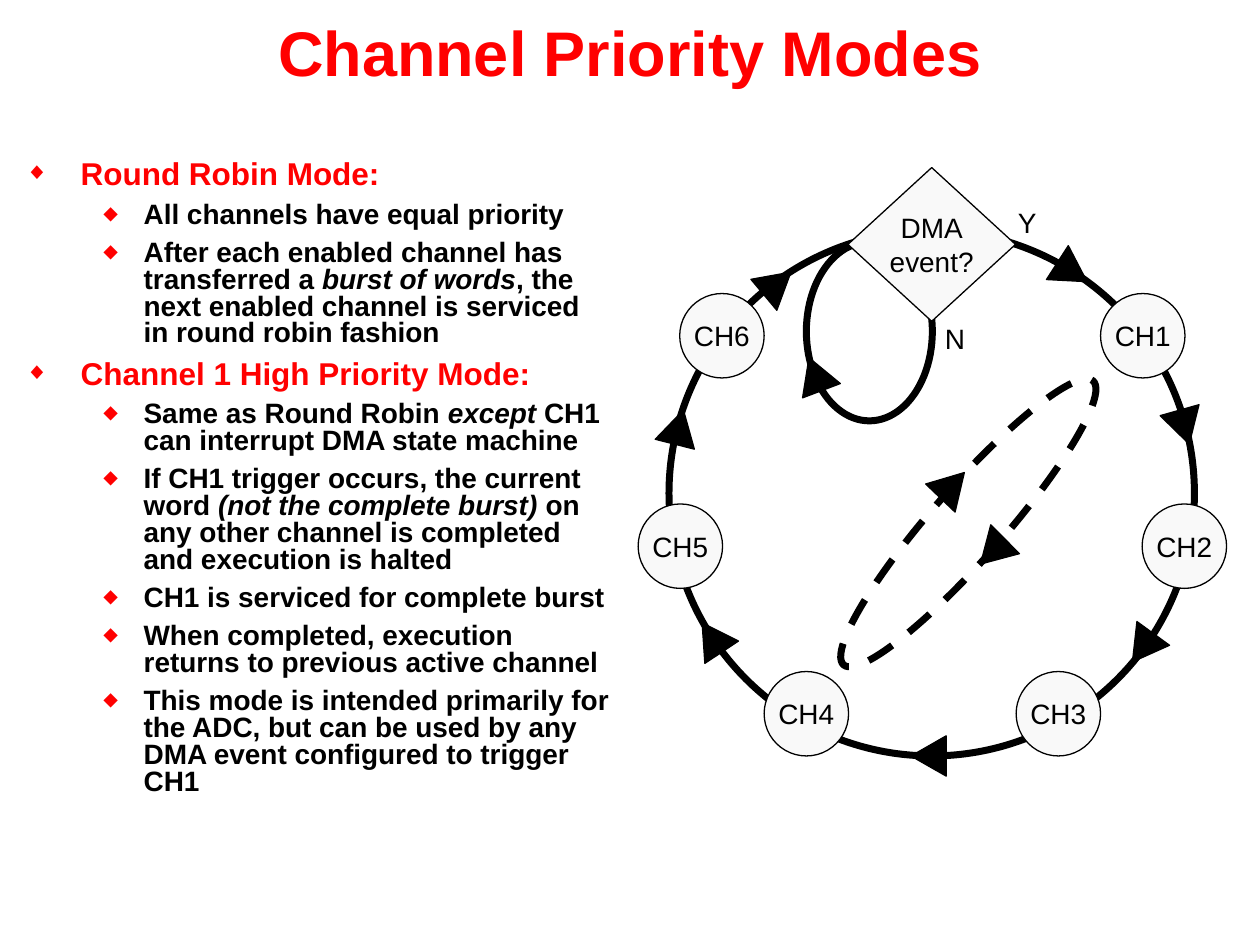
from dataclasses import dataclass

from lxml import etree
from pptx import Presentation
from pptx.dml.color import RGBColor
from pptx.enum.dml import MSO_LINE
from pptx.enum.shapes import MSO_SHAPE
from pptx.enum.text import MSO_ANCHOR, MSO_AUTO_SIZE, PP_ALIGN
from pptx.oxml.ns import qn
from pptx.util import Inches, Pt

OVAL, DIAMOND, TRIANGLE = MSO_SHAPE.OVAL, MSO_SHAPE.DIAMOND, MSO_SHAPE.ISOSCELES_TRIANGLE
MIDDLE, CENTER, DASH = MSO_ANCHOR.MIDDLE, PP_ALIGN.CENTER, MSO_LINE.DASH
NO_FIT, GROW = MSO_AUTO_SIZE.NONE, MSO_AUTO_SIZE.SHAPE_TO_FIT_TEXT
COLORS = {"red": "FF0000", "black": "000000", "node": "F9F9F9"}
LABEL = {"name": "Arial", "size": Pt(16), "bold": False}
RING_X, NODE, ARROW_W, ARROW_H = 7.4, 0.67, 0.32, 0.28


@dataclass
class Level:
    size: int
    color: str
    bullet: str
    margin: float
    hanging: float


@dataclass
class Item:
    level: int
    before: str
    emphasis: str = ""
    after: str = ""


@dataclass
class Node:
    text: str
    dx: float
    top: float


@dataclass
class Arrow:
    left: float
    top: float
    angle: float


LEVELS = [Level(18, "red", "◆", 0.44, 0.44), Level(16, "black", "⬥", 0.94, 0.32)]
ITEMS = [
    Item(0, "Round Robin Mode:"),
    Item(1, "All channels have equal priority"),
    Item(1, "After each enabled channel has transferred a ", "burst of words",
         ", the next enabled channel is serviced in round robin fashion"),
    Item(0, "Channel 1 High Priority Mode:"),
    Item(1, "Same as Round Robin ", "except", " CH1 can interrupt DMA state machine"),
    Item(1, "If CH1 trigger occurs, the current word ", "(not the complete burst)",
         " on any other channel is completed and execution is halted"),
    Item(1, "CH1 is serviced for complete burst"),
    Item(1, "When completed, execution returns to previous active channel"),
    Item(1, "This mode is intended primarily for the ADC, but can be used by any "
            "DMA event configured to trigger CH1"),
]
NODES = [
    Node("CH6", -1.67, 2.33), Node("CH1", 1.67, 2.33), Node("CH2", 2, 4),
    Node("CH5", -2, 4), Node("CH4", -1, 5.33), Node("CH3", 1, 5.33),
]
RING_ARROWS = [
    Arrow(9.24, 3.25, 164.2), Arrow(8.35, 2.02, 122.8), Arrow(8.91, 5, 216.1),
    Arrow(7.21, 5.86, 270), Arrow(5.49, 4.92, 326.4), Arrow(5.23, 3.25, 14.2),
    Arrow(6.01, 2.11, 50.1), Arrow(6.31, 2.83, 339.3),
]
INTERRUPT_ARROWS = [Arrow(7.38, 3.79, 163.5), Arrow(7.74, 4.16, 345)]


def rgb(name: str) -> RGBColor:
    return RGBColor.from_string(COLORS[name])


def set_font(font, color: str, values: dict) -> None:
    for key, value in values.items():
        setattr(font, key, value)
    font.color.rgb = rgb(color)


def place(s, left: float, top: float, width: float, height: float) -> None:
    s.left, s.top, s.width, s.height = map(Inches, (left, top, width, height))


def write(tf, lines: list[str], align=None) -> None:
    tf.word_wrap = False
    for i, line in enumerate(lines):
        p = tf.add_paragraph() if i else tf.paragraphs[0]
        p.alignment = align
        r = p.add_run()
        r.text = line
        set_font(r.font, "black", LABEL)


def add_bullet(p, level: Level) -> None:
    pPr = p._p.get_or_add_pPr()
    pPr.set("marL", str(Inches(level.margin)))
    pPr.set("indent", str(-Inches(level.hanging)))
    color = etree.SubElement(pPr, qn("a:buClr"))
    etree.SubElement(color, qn("a:srgbClr"), val=COLORS["red"])
    etree.SubElement(pPr, qn("a:buSzPct"), val="75000")
    etree.SubElement(pPr, qn("a:buFont"), typeface="Arial")
    etree.SubElement(pPr, qn("a:buChar"), char=level.bullet)


def add_items(tf, items: list[Item]) -> None:
    for i, item in enumerate(items):
        level = LEVELS[item.level]
        p = tf.add_paragraph() if i else tf.paragraphs[0]
        p.level = item.level
        p.line_spacing = 0.8
        p.space_before = Pt(0.4 * level.size if i else 0)
        add_bullet(p, level)
        for text in filter(None, (item.before, item.emphasis, item.after)):
            r = p.add_run()
            r.text = text
            set_font(r.font, level.color, {"name": "Arial", "size": Pt(level.size),
                                           "bold": True, "italic": text == item.emphasis})


def add_shape(shapes, kind, left: float, top: float, width: float, height: float,
              fill: str | None = None, weight: float = 0.75, angle: float = 0):
    s = shapes.add_shape(kind, *map(Inches, (left, top, width, height)))
    s.shadow.inherit = False
    s.rotation = angle
    if fill:
        s.fill.solid()
        s.fill.fore_color.rgb = rgb(fill)
    else:
        s.fill.background()
    s.line.color.rgb = rgb("black")
    s.line.width = Pt(weight)
    return s


def add_node(shapes, kind, lines: list[str], left: float, top: float,
             width: float, height: float) -> None:
    s = add_shape(shapes, kind, left, top, width, height, "node")
    s.text_frame.vertical_anchor = MIDDLE
    write(s.text_frame, lines, CENTER)


def add_arrow(shapes, arrow: Arrow) -> None:
    add_shape(shapes, TRIANGLE, arrow.left, arrow.top, ARROW_W, ARROW_H,
              "black", angle=arrow.angle)


def add_label(shapes, text: str, left: float, top: float) -> None:
    s = shapes.add_textbox(*map(Inches, (left, top, 0.35, 0.37)))
    write(s.text_frame, [text])
    s.text_frame.auto_size = GROW


def main() -> None:
    prs = Presentation()
    prs.slide_width, prs.slide_height = Inches(10), Inches(7.5)
    slide = prs.slides.add_slide(prs.slide_layouts[1])
    shapes = slide.shapes

    title, body = slide.placeholders
    place(title, 0, 0, 10, 0.81)
    tf = title.text_frame
    tf.auto_size, tf.vertical_anchor = NO_FIT, MIDDLE
    p = tf.paragraphs[0]
    p.alignment = CENTER
    r = p.add_run()
    r.text = "Channel Priority Modes"
    set_font(r.font, "red", {"name": "Arial", "size": Pt(36), "bold": True})

    place(body, 0.1, 1.23, 4.85, 5.5)
    body.text_frame.auto_size = NO_FIT
    add_items(body.text_frame, ITEMS)

    add_shape(shapes, OVAL, 6.4, 1.92, 1, 1.42, weight=4)
    add_shape(shapes, OVAL, 5.31, 1.83, 4.17, 4.17, weight=4)
    add_node(shapes, DIAMOND, ["DMA", "event?"], 6.73, 1.33, 1.33, 1.22)
    for node in NODES:
        add_node(shapes, OVAL, [node.text], RING_X + node.dx - NODE / 2, node.top, NODE, NODE)
    for arrow in RING_ARROWS:
        add_arrow(shapes, arrow)
    add_label(shapes, "Y", 7.98, 1.58)
    add_label(shapes, "N", 7.4, 2.5)

    loop = add_shape(shapes, OVAL, 7.4, 2.65, 0.57, 3, weight=4, angle=41.3)
    loop.line.dash_style = DASH
    for arrow in INTERRUPT_ARROWS:
        add_arrow(shapes, arrow)

    prs.save("out.pptx")


if __name__ == "__main__":
    main()
